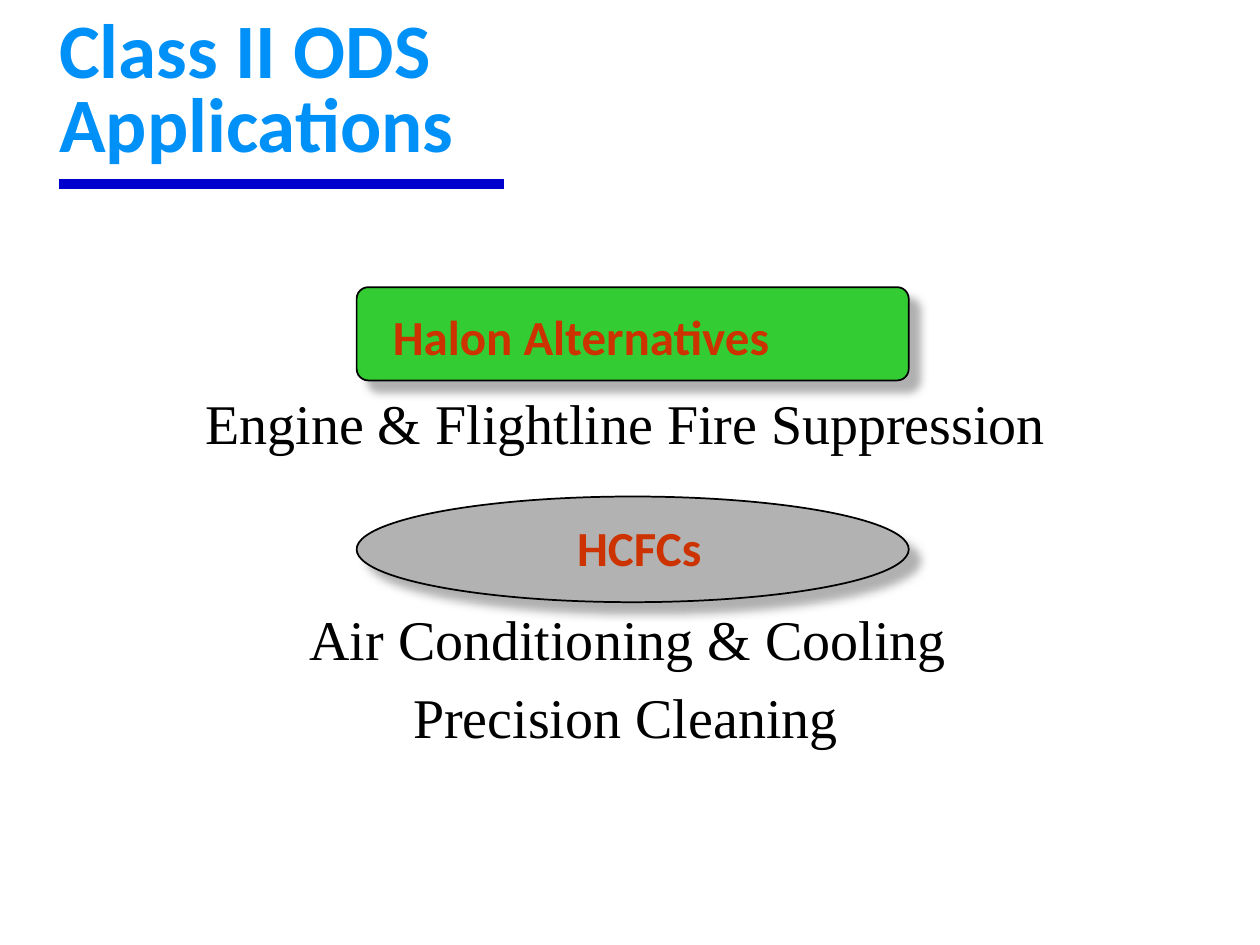
from dataclasses import dataclass
from typing import NamedTuple

from lxml import etree
from pptx import Presentation
from pptx.dml.color import RGBColor
from pptx.enum.shapes import MSO_CONNECTOR, MSO_SHAPE
from pptx.enum.text import MSO_ANCHOR, MSO_AUTO_SIZE, PP_ALIGN
from pptx.oxml.ns import qn
from pptx.util import Cm, Pt

LEFT, CENTER = PP_ALIGN.LEFT, PP_ALIGN.CENTER
ROUND, OVAL = MSO_SHAPE.ROUNDED_RECTANGLE, MSO_SHAPE.OVAL
STRAIGHT = MSO_CONNECTOR.STRAIGHT
BOTTOM = MSO_ANCHOR.BOTTOM
FIXED, GROW = MSO_AUTO_SIZE.NONE, MSO_AUTO_SIZE.SHAPE_TO_FIT_TEXT


class Style(NamedTuple):
    face: str
    size: int
    color: str
    bold: bool


@dataclass(frozen=True)
class Theme:
    title: Style = Style("Calibri", 44, "0091F8", True)
    label: Style = Style("Calibri", 28, "CC3300", True)
    body: Style = Style("Times New Roman", 32, "000000", False)
    green: str = "33CC33"
    gray: str = "B2B2B2"
    edge: str = "000000"
    rule: str = "0000CC"
    shade: str = "969696"


THEME = Theme()


class Box(NamedTuple):
    """Left, top, width and height in centimetres."""
    x: float
    y: float
    w: float
    h: float

    def place(self):
        return [Cm(v) for v in self]


class Plate(NamedTuple):
    kind: int
    box: Box
    fill: str


class Note(NamedTuple):
    text: str
    box: Box
    style: Style
    align: int = LEFT
    wrap: bool = False


PLATES = [
    Plate(ROUND, Box(7.19, 5.79, 11.13, 1.88), THEME.green),
    Plate(OVAL, Box(7.19, 10.01, 11.13, 2.13), THEME.gray),
]
NOTES = [
    Note("Halon Alternatives", Box(7.67, 6.05, 10.62, 1.45),
         THEME.label, wrap=True),
    Note("HCFCs", Box(9.47, 10.31, 6.83, 1.45), THEME.label, CENTER, True),
    Note("Engine & Flightline Fire Suppression",
         Box(3.89, 7.7, 17.6, 1.63), THEME.body),
    Note("Air Conditioning & Cooling",
         Box(5.99, 12.07, 13.46, 1.63), THEME.body),
    Note("Precision Cleaning", Box(8.08, 13.64, 9.17, 1.63), THEME.body),
]


def set_font(para, style: Style) -> None:
    font = para.font
    font.name, font.size, font.bold = style.face, Pt(style.size), style.bold
    font.color.rgb = RGBColor.from_string(style.color)


def add_shade(shape) -> None:
    """Give the shape a soft shadow down and to the right."""
    shape.shadow.inherit = False
    effects = shape._element.spPr.find(qn("a:effectLst"))
    shade = etree.SubElement(effects, qn("a:outerShdw"), blurRad=str(Pt(5)),
                             dist=str(Pt(8.5)), dir="2700000", algn="ctr",
                             rotWithShape="0")
    color = etree.SubElement(shade, qn("a:srgbClr"), val=THEME.shade)
    etree.SubElement(color, qn("a:alpha"), val="75000")


def add_plate(slide, plate: Plate) -> None:
    shape = slide.shapes.add_shape(plate.kind, *plate.box.place())
    if plate.kind == ROUND:
        shape.adjustments[0] = 0.125
    shape.fill.solid()
    shape.fill.fore_color.rgb = RGBColor.from_string(plate.fill)
    shape.line.color.rgb = RGBColor.from_string(THEME.edge)
    shape.line.width = Pt(1)
    add_shade(shape)


def add_note(slide, note: Note) -> None:
    frame = slide.shapes.add_textbox(*note.box.place()).text_frame
    frame.word_wrap = note.wrap
    frame.auto_size = GROW
    para = frame.paragraphs[0]
    para.text, para.alignment = note.text, note.align
    set_font(para, note.style)


def add_title(slide, lines: list[str]) -> None:
    title = slide.shapes.title
    title.left, title.top, title.width, title.height = Box(
        0.94, 0.43, 21.59, 3.07).place()
    frame = title.text_frame
    frame.auto_size, frame.vertical_anchor = FIXED, BOTTOM
    para = frame.paragraphs[0]
    para.alignment, para.line_spacing = LEFT, 0.8
    for i, line in enumerate(lines):
        if i:
            para.add_line_break()
        para.add_run().text = line
    set_font(para, THEME.title)


def add_rule(slide) -> None:
    rule = slide.shapes.add_connector(STRAIGHT, Cm(1.19), Cm(3.71),
                                      Cm(10.16), Cm(3.71))
    rule.line.color.rgb = RGBColor.from_string(THEME.rule)
    rule.line.width = Pt(6)
    etree.SubElement(rule._element.spPr, qn("a:effectLst"))


def main() -> None:
    deck = Presentation()
    deck.slide_width, deck.slide_height = Cm(25.4), Cm(19.05)
    slide = deck.slides.add_slide(deck.slide_layouts.get_by_name("Title Only"))
    add_title(slide, ["Class II ODS", "Applications"])
    add_rule(slide)
    for plate in PLATES:
        add_plate(slide, plate)
    for note in NOTES:
        add_note(slide, note)
    deck.save("out.pptx")


if __name__ == "__main__":
    main()
